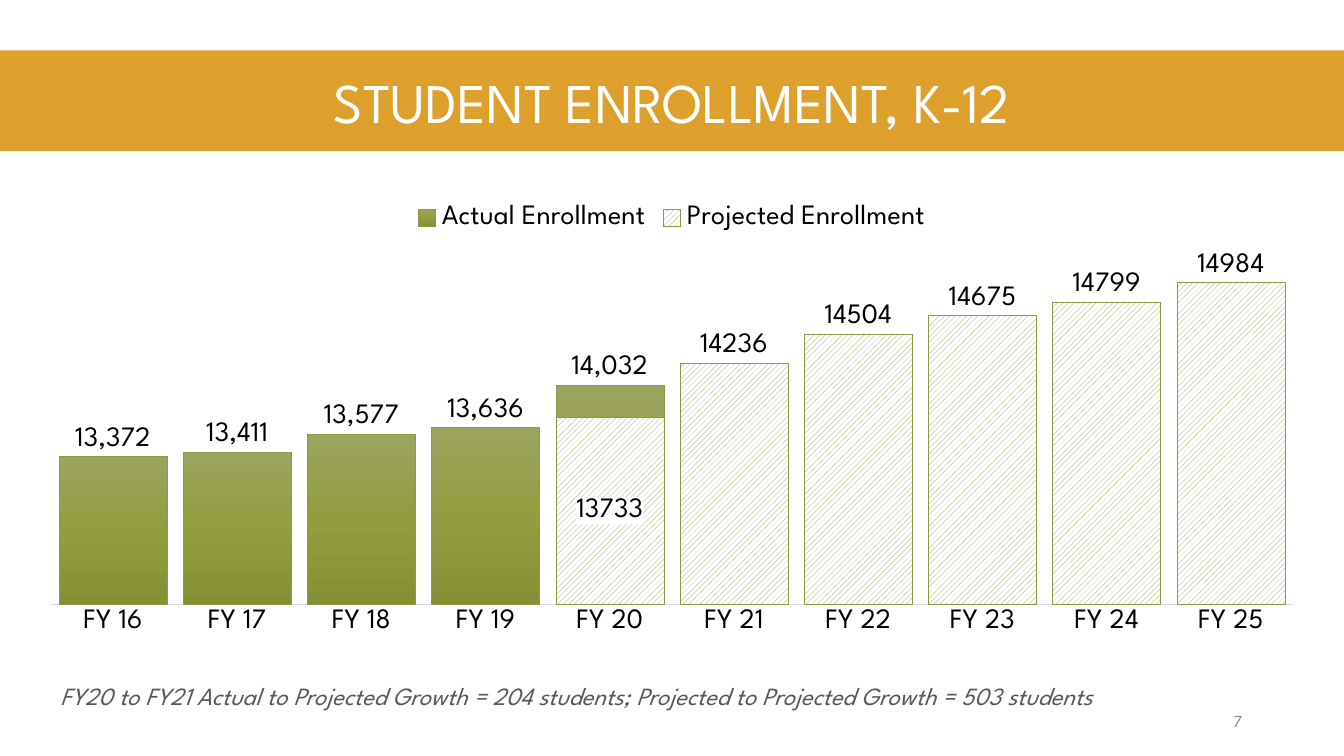
from copy import deepcopy

from pptx import Presentation
from pptx.chart.data import CategoryChartData
from pptx.dml.color import RGBColor
from pptx.enum.chart import XL_CHART_TYPE as Kind
from pptx.enum.chart import XL_LABEL_POSITION as Spot
from pptx.enum.chart import XL_LEGEND_POSITION as Side
from pptx.enum.chart import XL_TICK_MARK as Tick
from pptx.enum.dml import MSO_PATTERN as Pattern
from pptx.enum.shapes import MSO_SHAPE as Shape
from pptx.enum.text import MSO_ANCHOR as Anchor
from pptx.enum.text import PP_ALIGN as Align
from pptx.oxml import parse_xml
from pptx.oxml.ns import nsdecls
from pptx.util import Inches, Pt

FONT = "League Spartan"
GOLD = RGBColor(0xDE, 0xA0, 0x2C)
WHITE = RGBColor(0xFF, 0xFF, 0xFF)
BLACK = RGBColor(0, 0, 0)
GREY = RGBColor(0x59, 0x59, 0x59)
PALE = RGBColor(0x8C, 0x8C, 0x8C)
AXIS = RGBColor(0xD6, 0xD9, 0xEB)
GREEN = RGBColor(0x8F, 0x99, 0x43)
SHADES = [(0, RGBColor(0x9C, 0xA5, 0x5F)),
          (0.5, RGBColor(0x92, 0x9D, 0x3F)),
          (1, RGBColor(0x85, 0x90, 0x34))]

YEARS = [f"FY {year}" for year in range(16, 26)]
ACTUAL = [13372, 13411, 13577, 13636, 14032] + [None] * 5
PLANNED = [None] * 4 + [13733, 14236, 14504, 14675, 14799, 14984]
OVERLAP_YEAR = YEARS.index("FY 20")
PLOT = {"x": 0, "y": 0.074, "w": 1, "h": 0.798}
RIGHT_IDS = ("5001", "5002")


def set_font(font, size, color, **extra):
    look = {"name": FONT, "size": Pt(size), **extra}
    for key, value in look.items():
        setattr(font, key, value)
    font.color.rgb = color


def write(frame, text, align, size, color, **extra):
    frame.word_wrap = True
    par = frame.paragraphs[0]
    par.alignment = align
    run = par.add_run()
    run.text = text
    set_font(run.font, size, color, **extra)


def add_banner(slide, box, text):
    bar = slide.shapes.add_shape(Shape.RECTANGLE, *map(Inches, box))
    bar.shadow.inherit = False
    bar.fill.solid()
    bar.fill.fore_color.rgb = GOLD
    bar.line.fill.background()
    frame = bar.text_frame
    frame.margin_left = frame.margin_right = Inches(0.5)
    frame.vertical_anchor = Anchor.MIDDLE
    write(frame, text, Align.CENTER, 40, WHITE)


def add_note(slide, box, text, align, anchor, size, color, **extra):
    frame = slide.shapes.add_textbox(*map(Inches, box)).text_frame
    frame.vertical_anchor = anchor
    write(frame, text, align, size, color, **extra)


def fill_shades(fill):
    """Apply the three-stop vertical gradient."""
    fill.gradient()
    fill.gradient_angle = 270
    first = fill.gradient_stops[0]._gs
    first.addnext(deepcopy(first))
    for stop, (place, color) in zip(fill.gradient_stops, SHADES):
        stop.position = place
        stop.color.rgb = color


def fill_hatch(fill):
    fill.patterned()
    fill.pattern = Pattern.WIDE_UPWARD_DIAGONAL
    fill.fore_color.rgb = GREEN
    fill.back_color.rgb = WHITE


def style_bars(bars, paint, mask):
    paint(bars.format.fill)
    bars.invert_if_negative = False
    bars.format.line.color.rgb = GREEN
    bars.format.line.width = Pt(0.5)
    labels = bars.data_labels
    look = {"show_value": True, "position": Spot.OUTSIDE_END,
            "number_format": mask, "number_format_is_linked": False}
    for key, value in look.items():
        setattr(labels, key, value)
    set_font(labels.font, 20, BLACK)


def center_label(bars, index):
    """Put one label inside its bar on a white ground."""
    label = bars.points[index].data_label
    set_font(label.font, 20, BLACK)
    label.position = Spot.CENTER
    node = bars._element.xpath("c:dLbls/c:dLbl")[0]
    for old in node.xpath("c:spPr"):
        node.remove(old)
    node.xpath("c:txPr")[0].addprevious(parse_xml(
        f'<c:spPr {nsdecls("c", "a")}><a:solidFill>'
        f'<a:srgbClr val="{WHITE}"/></a:solidFill>'
        f'<a:ln><a:noFill/></a:ln></c:spPr>'))


def place_plot(area):
    for old in area.xpath("c:layout"):
        area.remove(old)
    modes = "".join(f'<c:{key}Mode val="edge"/>' for key in "xy")
    sizes = "".join(f'<c:{key} val="{val}"/>' for key, val in PLOT.items())
    area.insert(0, parse_xml(
        f'<c:layout {nsdecls("c")}><c:manualLayout>'
        f'<c:layoutTarget val="inner"/>{modes}{sizes}'
        f'</c:manualLayout></c:layout>'))


def split_right(area):
    """Move the last series to a hidden pair of axes on the right."""
    left = area.xpath("c:barChart")[0]
    right = deepcopy(left)
    left.remove(left.xpath("c:ser")[1])
    right.remove(right.xpath("c:ser")[0])
    left.addnext(right)
    for node, name in zip(right.xpath("c:axId"), RIGHT_IDS):
        node.set("val", name)

    cats, vals = (deepcopy(area.xpath(f"c:{tag}")[0])
                  for tag in ("catAx", "valAx"))
    area.xpath("c:valAx")[0].addnext(vals)
    vals.addnext(cats)
    for axis, own, other in ((cats, *RIGHT_IDS), (vals, *RIGHT_IDS[::-1])):
        for tag, value in (("axId", own), ("crossAx", other), ("delete", "1")):
            axis.xpath(f"c:{tag}")[0].set("val", value)
    vals.xpath("c:axPos")[0].set("val", "r")
    vals.xpath("c:crosses")[0].set("val", "max")
    vals.xpath("c:scaling/c:min")[0].addprevious(
        parse_xml(f'<c:max {nsdecls("c")} val="14200"/>'))


def add_bars(slide, box):
    data = CategoryChartData()
    data.categories = YEARS
    data.add_series("Actual Enrollment", ACTUAL)
    data.add_series("Projected Enrollment", PLANNED)
    chart = slide.shapes.add_chart(
        Kind.COLUMN_CLUSTERED, *map(Inches, box), data).chart
    set_font(chart.font, 20, BLACK)
    chart.has_title = False

    chart.has_legend = True
    chart.legend.position = Side.TOP
    chart.legend.include_in_layout = False
    set_font(chart.legend.font, 20, BLACK)

    scale = chart.value_axis
    look = {"visible": False, "has_major_gridlines": False,
            "minimum_scale": 12000}
    for key, value in look.items():
        setattr(scale, key, value)
    scale.tick_labels.number_format = "#,##0"
    scale.tick_labels.number_format_is_linked = False
    years = chart.category_axis
    years.major_tick_mark = years.minor_tick_mark = Tick.NONE
    years.format.line.color.rgb = AXIS
    years.format.line.width = Pt(0.75)
    set_font(years.tick_labels.font, 20, BLACK)

    plot = chart.plots[0]
    plot.vary_by_categories = False
    plot.gap_width = 15
    plot.overlap = 100
    actual, planned = plot.series
    style_bars(actual, fill_shades, "#,##0")
    style_bars(planned, fill_hatch, "General")
    center_label(planned, OVERLAP_YEAR)
    area = chart._chartSpace.xpath("c:chart/c:plotArea")[0]
    place_plot(area)
    split_right(area)


def main():
    deck = Presentation()
    deck.slide_width = Inches(13.33)
    deck.slide_height = Inches(7.5)
    slide = deck.slides.add_slide(deck.slide_layouts[6])
    add_banner(slide, (0, 0.5, 13.33, 1), "STUDENT ENROLLMENT, K-12")
    add_bars(slide, (0.5, 1.9, 12.33, 4.7))
    add_note(slide, (0.5, 6.7, 12.33, 0.4),
             "FY20 to FY21 Actual to Projected Growth = 204 students; "
             "Projected to Projected Growth = 503 students",
             Align.LEFT, Anchor.TOP, 17.7, GREY, italic=True)
    add_note(slide, (9.42, 6.95, 3, 0.4), "7",
             Align.RIGHT, Anchor.MIDDLE, 12, PALE)
    deck.save("out.pptx")


if __name__ == "__main__":
    main()
